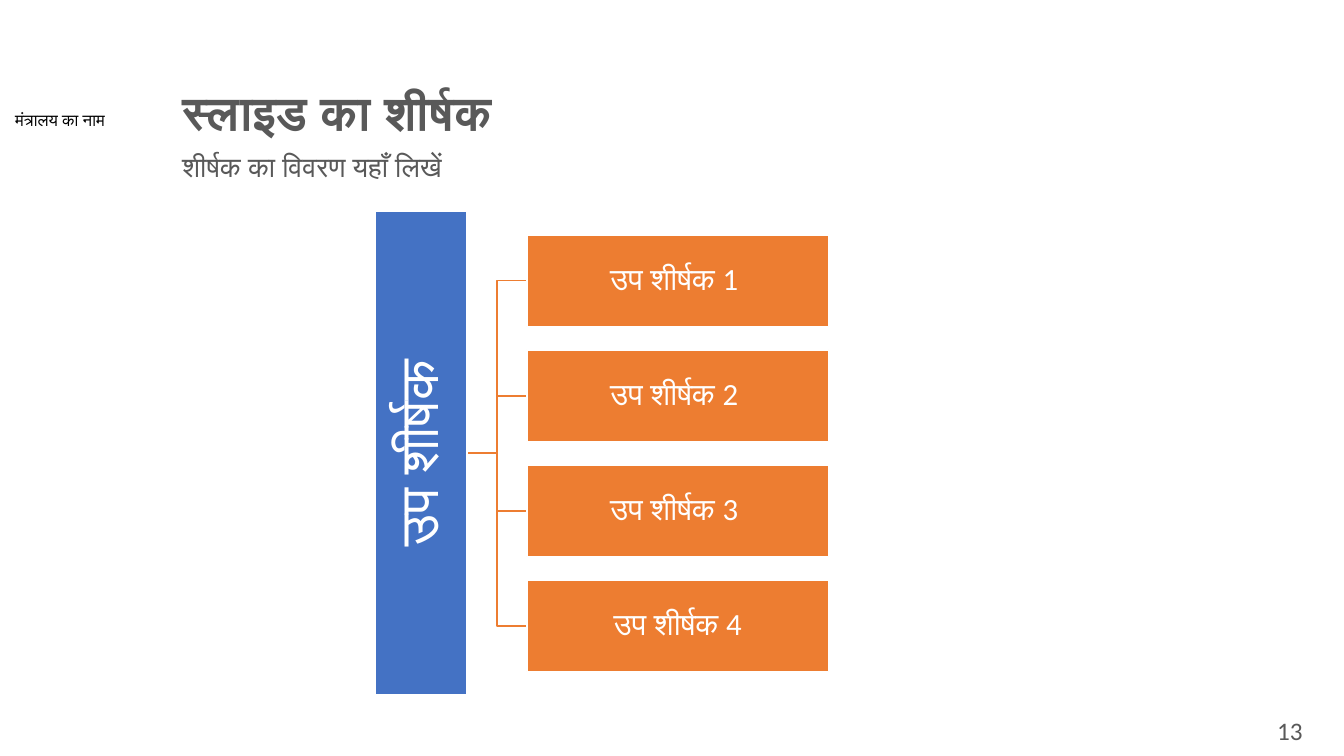
from dataclasses import dataclass

from pptx import Presentation
from pptx.dml.color import RGBColor
from pptx.enum.shapes import MSO_SHAPE
from pptx.enum.text import MSO_ANCHOR, PP_ALIGN
from pptx.shapes.autoshape import Shape
from pptx.slide import Slide
from pptx.util import Cm, Pt

RECT = MSO_SHAPE.RECTANGLE
LEFT, CENTER = PP_ALIGN.LEFT, PP_ALIGN.CENTER
MIDDLE = MSO_ANCHOR.MIDDLE

BLACK = RGBColor(0x00, 0x00, 0x00)
WHITE = RGBColor(0xFF, 0xFF, 0xFF)
GRAY = RGBColor(0x59, 0x59, 0x59)
BLUE = RGBColor(0x44, 0x72, 0xC4)
ORANGE = RGBColor(0xED, 0x7D, 0x31)

FONT = "Calibri"
INSET = 0.05


@dataclass(frozen=True)
class Box:
    """A rectangle in centimetres."""
    left: float
    top: float
    width: float
    height: float

    @property
    def middle(self) -> float:
        return self.top + self.height / 2


@dataclass(frozen=True)
class Label:
    text: str
    size: float
    color: RGBColor
    bold: bool = False
    align: PP_ALIGN = LEFT
    spacing: float = 1.0


TEXTS = [
    (Box(0.13, 2.64, 3.86, 0.76), Label("मंत्रालय का नाम", 12, BLACK)),
    (Box(4.34, 2.13, 24.41, 1.4),
     Label("स्लाइड का शीर्षक", 34, GRAY, bold=True, spacing=0.9)),
    (Box(4.34, 3.73, 24.41, 1.6),
     Label("शीर्षक का विवरण यहाँ लिखें", 20, GRAY, spacing=0.9)),
    (Box(31.14, 17.91, 2.74, 1.14), Label("13", 18, GRAY, align=CENTER)),
]

ROOT = Box(4.52, 10.26, 12.19, 2.31)  # before its quarter turn
ROOT_EDGE = 11.79
BRANCH_X = 12.53
FIRST_CHILD = Box(13.28, 5.92, 7.6, 2.31)
CHILD_PITCH = 2.9
CHILDREN = ["उप शीर्षक 1 ", "उप शीर्षक 2 ", "उप शीर्षक 3 ", "उप शीर्षक 4"]


def write(sp: Shape, label: Label) -> None:
    tf = sp.text_frame
    tf.word_wrap = True
    p = tf.paragraphs[0]
    p.alignment = label.align
    p.line_spacing = label.spacing
    r = p.add_run()
    r.text = label.text
    r.font.name = FONT
    r.font.size = Pt(label.size)
    r.font.bold = label.bold
    r.font.color.rgb = label.color


def add_text(s: Slide, box: Box, label: Label) -> None:
    sp = s.shapes.add_textbox(Cm(box.left), Cm(box.top), Cm(box.width), Cm(box.height))
    write(sp, label)


def add_node(s: Slide, box: Box, text: str, size: float, fill: RGBColor,
             rotation: float = 0) -> None:
    sp = s.shapes.add_shape(RECT, Cm(box.left), Cm(box.top), Cm(box.width), Cm(box.height))
    sp.shadow.inherit = False
    sp.rotation = rotation
    sp.fill.solid()
    sp.fill.fore_color.rgb = fill
    sp.line.color.rgb = WHITE
    sp.line.width = Pt(1)
    tf = sp.text_frame
    tf.vertical_anchor = MIDDLE
    tf.margin_left = tf.margin_right = tf.margin_top = tf.margin_bottom = Cm(INSET)
    write(sp, Label(text, size, WHITE, align=CENTER, spacing=0.9))


def add_elbow(s: Slide, child: Box) -> None:
    """Draw the bent line from the root to a child."""
    builder = s.shapes.build_freeform(Cm(ROOT_EDGE), Cm(ROOT.middle))
    builder.add_line_segments([
        (Cm(BRANCH_X), Cm(ROOT.middle)),
        (Cm(BRANCH_X), Cm(child.middle)),
        (Cm(child.left), Cm(child.middle)),
    ], close=False)
    sp = builder.convert_to_shape()
    sp.shadow.inherit = False
    sp.fill.background()
    sp.line.color.rgb = ORANGE
    sp.line.width = Pt(1)


def main() -> None:
    prs = Presentation()
    prs.slide_width, prs.slide_height = Cm(33.87), Cm(19.05)
    s = prs.slides.add_slide(prs.slide_layouts[6])

    for box, label in TEXTS:
        add_text(s, box, label)

    boxes = [
        Box(FIRST_CHILD.left, FIRST_CHILD.top + i * CHILD_PITCH,
            FIRST_CHILD.width, FIRST_CHILD.height)
        for i in range(len(CHILDREN))
    ]
    for box in reversed(boxes):
        add_elbow(s, box)
    add_node(s, ROOT, "उप शीर्षक", 39, BLUE, rotation=270)
    for box, text in zip(boxes, CHILDREN):
        add_node(s, box, text, 22, ORANGE)

    prs.save("out.pptx")


if __name__ == "__main__":
    main()
